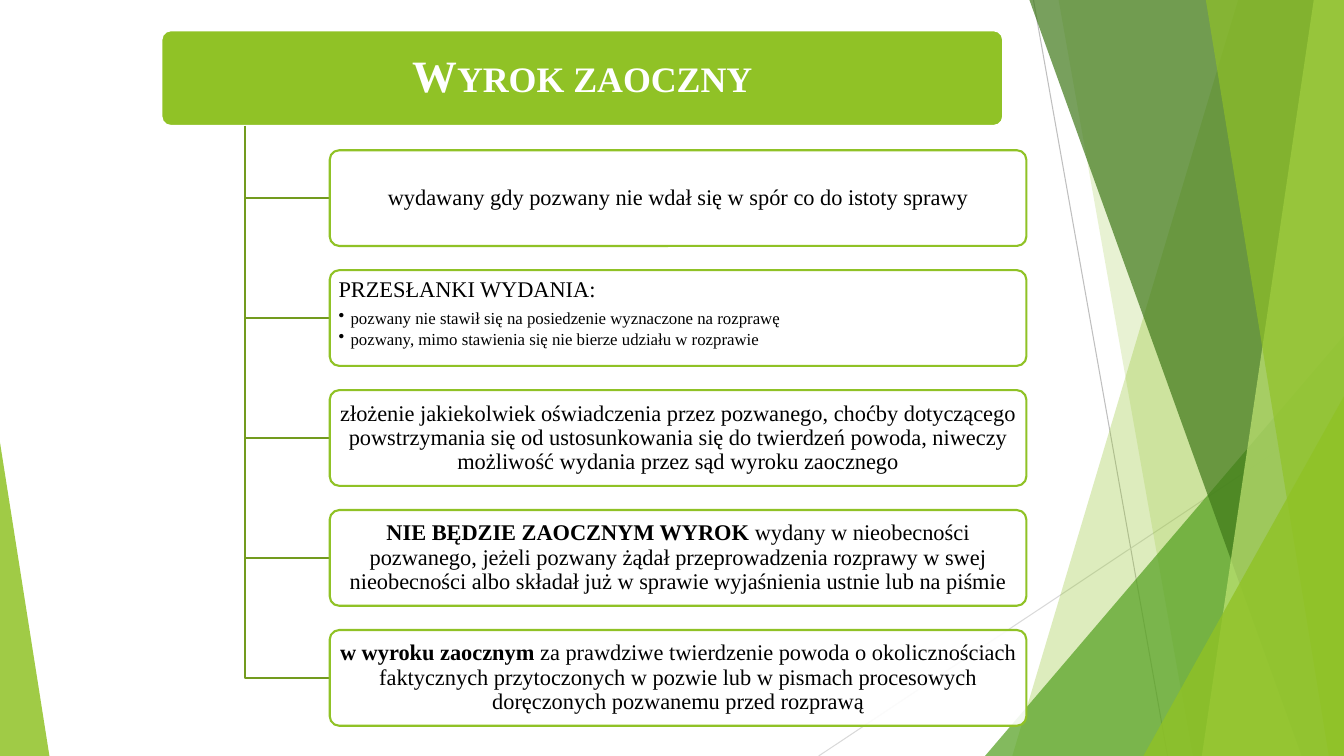
import pptx
import pptx.util
import pptx.dml.color
import pptx.enum.shapes
import pptx.enum.text
import pptx.oxml
import pptx.oxml.ns
import lxml.etree

Inches, Pt = pptx.util.Inches, pptx.util.Pt
KIND = pptx.enum.shapes.MSO_SHAPE
ALIGN = pptx.enum.text.PP_ALIGN
ANCHOR = pptx.enum.text.MSO_ANCHOR
qn = pptx.oxml.ns.qn

WIDE, HIGH = 13.33, 7.5
FACE = "Times New Roman"
HUE = {
    "lime": "90C226", "leaf": "54A021", "pine": "3F7819", "pale": "C0E474",
    "stem": "739B1E", "white": "FFFFFF", "black": "000000",
    "grey": "BFBFBF", "mist": "D9D9D9",
}

# Each card is a list of paragraphs; a paragraph is (bold part, plain part, level)
CARDS = [
    [("", "wydawany gdy pozwany nie wdał się w spór co do istoty sprawy", 0)],
    [("", "PRZESŁANKI WYDANIA:", 0),
     ("", "pozwany nie stawił się na posiedzenie wyznaczone na rozprawę", 1),
     ("", "pozwany, mimo stawienia się nie bierze udziału w rozprawie", 1)],
    [("", "złożenie jakiekolwiek oświadczenia przez pozwanego, choćby dotyczącego "
      "powstrzymania się od ustosunkowania się do twierdzeń powoda, niweczy "
      "możliwość wydania przez sąd wyroku zaocznego", 0)],
    [("NIE BĘDZIE ZAOCZNYM WYROK ", "wydany w nieobecności pozwanego, jeżeli "
      "pozwany żądał przeprowadzenia rozprawy w swej nieobecności albo składał "
      "już w sprawie wyjaśnienia ustnie lub na piśmie", 0)],
    [("w wyroku zaocznym ", "za prawdziwe twierdzenie powoda o okolicznościach "
      "faktycznych przytoczonych w pozwie lub w pismach procesowych doręczonych "
      "pozwanemu przed rozprawą", 0)],
]


def color(name):
    return pptx.dml.color.RGBColor.from_string(HUE[name])


def paint(shape, fill=None, alpha=100, line=None):
    """Set fill, opacity in percent and outline."""
    shape.shadow.inherit = False
    if fill:
        shape.fill.solid()
        shape.fill.fore_color.rgb = color(fill)
        if alpha < 100:
            tone = shape.fill._xPr.find(".//" + qn("a:srgbClr"))
            lxml.etree.SubElement(tone, qn("a:alpha"), val=str(alpha * 1000))
    else:
        shape.fill.background()
    if line:
        shape.line.color.rgb = color(line)
        shape.line.width = Pt(1.5)
    else:
        shape.line.fill.background()


def trace(shapes, points, close):
    start, *rest = [(Inches(x), Inches(y)) for x, y in points]
    pen = shapes.build_freeform(*start)
    pen.add_line_segments(rest, close=close)
    return pen.convert_to_shape()


def block(shapes, kind, box, adjust):
    shape = shapes.add_shape(kind, *map(Inches, box))
    shape.adjustments[0] = adjust
    return shape


def style(para, size, tint, align, bold=None):
    para.alignment = align
    para.line_spacing = 0.9
    font = para.font
    font.name, font.size, font.bold = FACE, Pt(size), bold
    font.color.rgb = color(tint)


def inset(frame, side, top):
    frame.word_wrap = True
    frame.margin_left = frame.margin_right = Inches(side)
    frame.margin_top = frame.margin_bottom = Inches(top)


def decor(shapes, box):
    """Translucent facets and thin lines along the slide edges."""
    left, top, wide, high = box
    right, foot = left + wide, top + high
    for x, y, end, tint in ((10.25, top, 11.58, "grey"), (right, 4.03, 8.12, "mist")):
        line = shapes.add_connector(
            pptx.enum.shapes.MSO_CONNECTOR.STRAIGHT,
            Inches(x), Inches(y), Inches(end), Inches(foot))
        line.line.color.rgb = color(tint)
        line.line.width = Pt(0.75)
        lxml.etree.SubElement(line._element.spPr, qn("a:effectLst"))

    def facet(head, base, tint, alpha):
        points = [(head, top), (right, top), (right, foot), (base, foot)]
        paint(trace(shapes, points, True), tint, alpha)

    def wedge(x, y, span, lean, tint, alpha):
        shape = block(shapes, KIND.ISOSCELES_TRIANGLE, (x, y, span, foot - y), lean)
        paint(shape, tint, alpha)

    facet(12.28, 10.04, "lime", 30)
    facet(10.5, 11.83, "lime", 20)
    wedge(9.77, 3.33, right - 9.77, 1, "leaf", 72)
    facet(10.21, 12.91, "pine", 70)
    facet(13.03, 11.92, "pale", 70)
    facet(11.96, 13.18, "lime", 65)
    wedge(11.34, 3.93, right - 11.34, 1, "lime", 80)
    wedge(left, 4.39, 0.49, 0, "lime", 85)


def header(shapes, box):
    """Green bar with the title placeholder on top."""
    paint(block(shapes, KIND.ROUNDED_RECTANGLE, box, 0.1), "lime", line="white")
    left, top, wide, high = box
    title = shapes.title
    title.left, title.top = Inches(left + 0.03), Inches(top + 0.03)
    title.width, title.height = Inches(wide - 0.06), Inches(high - 0.06)
    shapes._spTree.append(title._element)
    frame = title.text_frame
    inset(frame, 0.07, 0.04)
    frame.vertical_anchor = ANCHOR.MIDDLE
    para = frame.paragraphs[0]
    run = para.add_run()
    run.text = "Wyrok zaoczny"
    run.font._element.set("cap", "small")
    style(para, 32, "white", ALIGN.CENTER, True)


def card(shapes, box, paras):
    """Outlined card with centred text, or a heading and bullets."""
    shape = block(shapes, KIND.ROUNDED_RECTANGLE, box, 0.1)
    paint(shape, "white", 90, "lime")
    frame = shape.text_frame
    inset(frame, 0.06, 0.05)
    listed = len(paras) > 1
    frame.vertical_anchor = ANCHOR.TOP if listed else ANCHOR.MIDDLE
    for i, (strong, plain, level) in enumerate(paras):
        para = frame.add_paragraph() if i else frame.paragraphs[0]
        if strong:
            run = para.add_run()
            run.text, run.font.bold = strong, True
        para.add_run().text = plain
        style(para, 12 if level else 16, "black", ALIGN.LEFT if listed else ALIGN.CENTER)
        if listed:
            para.space_after = Pt(2 if level else 5.6)
        if level:
            para.level = level
            props = para._p.get_or_add_pPr()
            props.set("marL", str(Inches(0.12)))
            props.set("indent", str(Inches(-0.12)))
            mark = pptx.oxml.parse_xml(
                '<a:buChar xmlns:a="http://schemas.openxmlformats.org/'
                'drawingml/2006/main" char="•"/>')
            props.find(qn("a:defRPr")).addprevious(mark)


def tree(shapes, box):
    """Header bar, with cards hanging from a stem at its left."""
    left, top, wide, high = box
    tall, step = 0.95, 1.19
    stem, edge, foot = left + 0.83, left + 1.67, top + tall
    header(shapes, (left, top, wide - 0.23, tall))
    for i, paras in enumerate(CARDS):
        y = top + step * (i + 1)
        mid = y + tall / 2
        paint(trace(shapes, [(stem, foot), (stem, mid), (edge, mid)], False), line="stem")
        card(shapes, (edge, y, left + wide - edge, tall), paras)


def main():
    deck = pptx.Presentation()
    deck.slide_width, deck.slide_height = Inches(WIDE), Inches(HIGH)
    slide = deck.slides.add_slide(deck.slide_layouts[5])
    decor(slide.shapes, (0, 0, WIDE, HIGH))
    tree(slide.shapes, (1.6, 0.3, 8.58, 6.9))
    deck.save("out.pptx")


if __name__ == "__main__":
    main()
